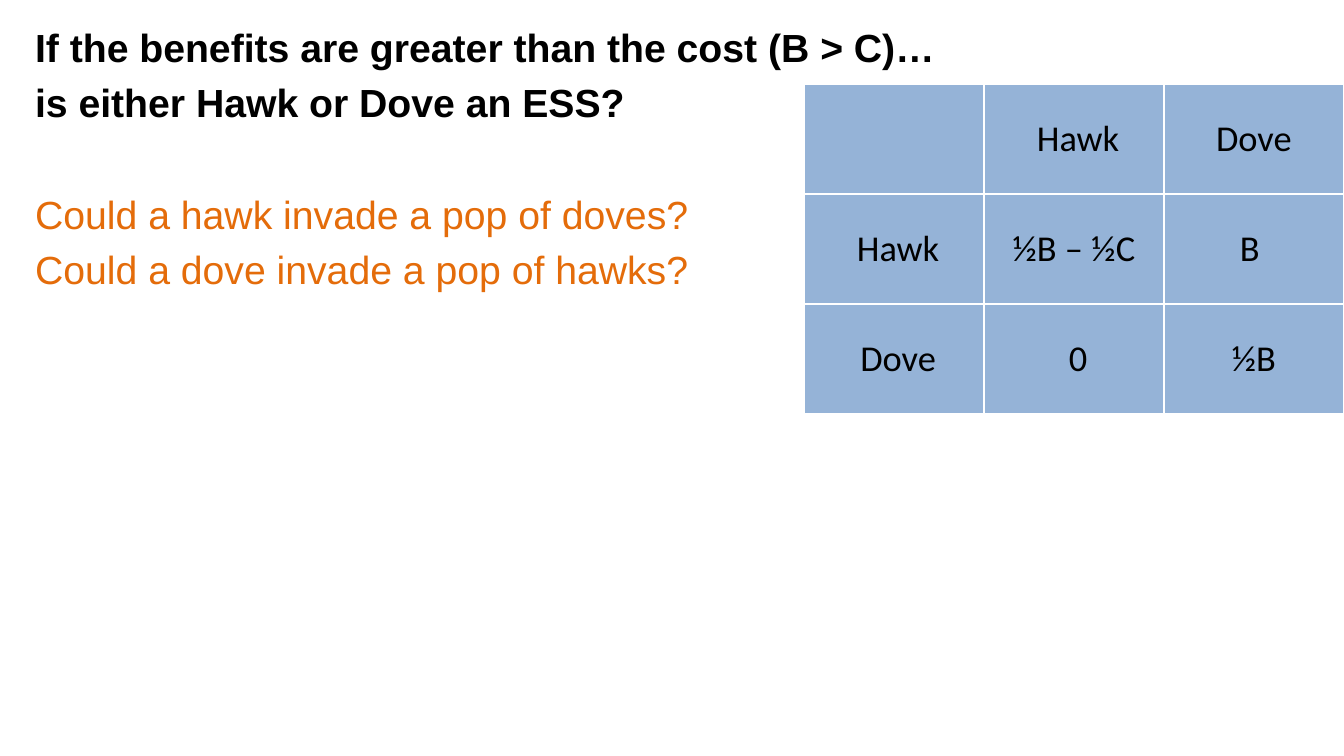
from dataclasses import dataclass

from lxml.etree import SubElement
from pptx import Presentation
from pptx.dml.color import RGBColor
from pptx.enum.text import MSO_ANCHOR as Anchor, MSO_AUTO_SIZE as AutoSize, PP_ALIGN as Align
from pptx.oxml.ns import qn
from pptx.shapes.placeholder import SlidePlaceholder
from pptx.slide import Slide
from pptx.table import _Cell as Cell
from pptx.text.text import _Paragraph as Paragraph
from pptx.util import Emu, Pt

EMU_PER_PX = 914400 / 100.8

BLACK = RGBColor(0x00, 0x00, 0x00)
WHITE = RGBColor(0xFF, 0xFF, 0xFF)
ORANGE = RGBColor(0xE4, 0x6C, 0x0A)
LIGHT_BLUE = RGBColor(0x95, 0xB3, 0xD7)


def px(length: int) -> Emu:
    return Emu(round(length * EMU_PER_PX))


@dataclass(frozen=True)
class Box:
    left: int
    top: int
    width: int
    height: int

    def emu(self) -> tuple[Emu, Emu, Emu, Emu]:
        return px(self.left), px(self.top), px(self.width), px(self.height)


@dataclass(frozen=True)
class Line:
    text: str
    color: RGBColor = ORANGE
    bold: bool = False
    space_before: Pt | None = None


SLIDE_WIDTH, SLIDE_HEIGHT = 1344, 756
QUESTION_BOX = Box(25, 18, 991, 361)
COLUMN_WIDTH, ROW_HEIGHT = 180, 110
BORDER_SIDES = ("a:lnL", "a:lnR", "a:lnT", "a:lnB")

QUESTION_LINES = [
    Line("If the benefits are greater than the cost (B > C)…", BLACK, True),
    Line("is either Hawk or Dove an ESS?", BLACK, True),
    Line("Could a hawk invade a pop of doves?", space_before=Pt(46.4)),
    Line("Could a dove invade a pop of hawks?"),
]
PAYOFFS = [
    ["", " Hawk", "Dove"],
    [" Hawk", "½B – ½C", "B "],
    [" Dove", " 0", "½B"],
]
PAYOFF_BOX = Box(804, 84, COLUMN_WIDTH * len(PAYOFFS[0]), ROW_HEIGHT * len(PAYOFFS))


def apply_format(target: object, values: dict[str, object]) -> None:
    for name, value in values.items():
        setattr(target, name, value)


def format_font(paragraph: Paragraph, color: RGBColor, values: dict[str, object]) -> None:
    apply_format(paragraph.font, values)
    paragraph.font.color.rgb = color


def remove_bullet(paragraph: Paragraph) -> None:
    properties = paragraph._p.get_or_add_pPr()
    properties.set("marL", "0")
    properties.set("indent", "0")
    SubElement(properties, qn("a:buNone"))


def write_questions(body: SlidePlaceholder) -> None:
    box = zip(("left", "top", "width", "height"), QUESTION_BOX.emu())
    apply_format(body, dict(box))
    frame = body.text_frame
    apply_format(frame, {"word_wrap": True, "auto_size": AutoSize.NONE})
    frame.text = "\n".join(line.text for line in QUESTION_LINES)
    for paragraph, line in zip(frame.paragraphs, QUESTION_LINES):
        if line.space_before is not None:
            paragraph.space_before = line.space_before
        remove_bullet(paragraph)
        format_font(paragraph, line.color, {"name": "Arial", "size": Pt(28), "bold": line.bold})


def add_borders(cell: Cell) -> None:
    properties = cell._tc.get_or_add_tcPr()
    for side in BORDER_SIDES:
        border = SubElement(properties, qn(side), w=str(Pt(1)))
        fill = SubElement(border, qn("a:solidFill"))
        SubElement(fill, qn("a:srgbClr"), val=str(WHITE))


def write_cell(cell: Cell, text: str) -> None:
    apply_format(cell, {
        "text": text,
        "vertical_anchor": Anchor.MIDDLE,
        "margin_left": px(1),
        "margin_right": px(1),
        "margin_top": px(1),
        "margin_bottom": 0,
    })
    add_borders(cell)
    cell.fill.solid()
    cell.fill.fore_color.rgb = LIGHT_BLUE
    paragraph = cell.text_frame.paragraphs[0]
    paragraph.alignment = Align.CENTER
    format_font(paragraph, BLACK, {"name": "Calibri", "size": Pt(26), "bold": False})


def add_payoff_table(slide: Slide) -> None:
    table = slide.shapes.add_table(len(PAYOFFS), len(PAYOFFS[0]), *PAYOFF_BOX.emu()).table
    apply_format(table, {"first_row": False, "horz_banding": False})
    for row, payoffs in enumerate(PAYOFFS):
        for column, payoff in enumerate(payoffs):
            write_cell(table.cell(row, column), payoff)


def main() -> None:
    presentation = Presentation()
    apply_format(presentation, {"slide_width": px(SLIDE_WIDTH), "slide_height": px(SLIDE_HEIGHT)})
    slide = presentation.slides.add_slide(presentation.slide_layouts.get_by_name("Title and Content"))
    title, body = slide.placeholders
    title.element.getparent().remove(title.element)
    write_questions(body)
    add_payoff_table(slide)
    presentation.save("out.pptx")


if __name__ == "__main__":
    main()
